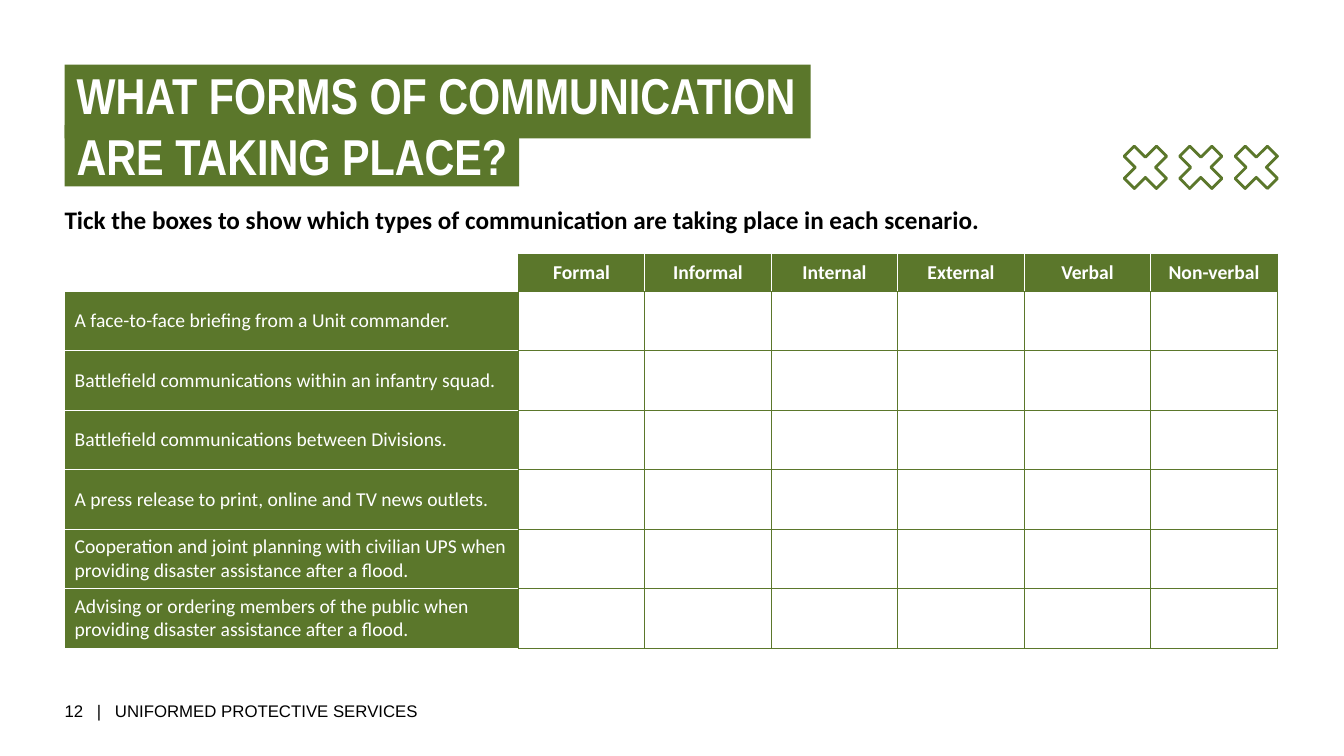
from lxml import etree
from pptx import Presentation
from pptx import util as u
from pptx.dml.color import RGBColor
from pptx.enum import text
from pptx.oxml import ns

PX = 9144  # EMU; 100 px to the inch
GREEN, WHITE, BLACK = "5B772B", "FFFFFF", "000000"
LEFT = 64


def write(frame, words, size, face, color, bold=False, **formats):
    """Put one paragraph into a text frame and format both."""
    frame.text = words
    for name, value in formats.items():
        setattr(frame, name, value)
    paragraph = frame.paragraphs[0]
    paragraph.alignment = text.PP_ALIGN.LEFT
    font = paragraph.runs[0].font
    for name, value in {"size": u.Pt(size), "name": face, "bold": bold}.items():
        setattr(font, name, value)
    font.color.rgb = RGBColor.from_string(color)
    return paragraph


def style_cell(cell, fill, **edges):
    """Fill a cell and draw its four borders, green unless given by side."""
    cell.fill.solid()
    cell.fill.fore_color.rgb = RGBColor.from_string(fill)
    cell.vertical_anchor = text.MSO_ANCHOR.MIDDLE
    properties = cell._tc.get_or_add_tcPr()
    for place, side in enumerate("LRTB"):
        line = etree.Element(ns.qn(f"a:ln{side}"), w=str(u.Pt(0.5)))
        solid = etree.SubElement(line, ns.qn("a:solidFill"))
        etree.SubElement(solid, ns.qn("a:srgbClr"), val=edges.get(side, GREEN))
        properties.insert(place, line)


deck = Presentation()
deck.slide_width, deck.slide_height = 1333 * PX, 750 * PX
slide = deck.slides.add_slide(deck.slide_layouts[5])
no_margins = dict.fromkeys(
    ("margin_left", "margin_top", "margin_right", "margin_bottom"), 0)

# Heading on two green bands
heading = slide.shapes.title
heading_rest = slide.shapes.add_textbox(0, 0, PX, PX)
for band, words, top, width in (
    (heading, "WHAT FORMS OF COMMUNICATION", 64, 740),
    (heading_rest, "ARE TAKING PLACE?", 124, 451),
):
    box = {"left": LEFT, "top": top, "width": width, "height": 61}
    for name, value in box.items():
        setattr(band, name, value * PX)
    band.fill.solid()
    band.fill.fore_color.rgb = RGBColor.from_string(GREEN)
    margins = no_margins | {"margin_left": 12 * PX, "margin_right": 8 * PX}
    write(band.text_frame, words, 36, "Arial Narrow", WHITE, True,
          word_wrap=False, vertical_anchor=text.MSO_ANCHOR.TOP,
          auto_size=text.MSO_AUTO_SIZE.SHAPE_TO_FIT_TEXT, **margins)

# Instruction and footer
instruction = slide.shapes.add_textbox(LEFT * PX, 203 * PX, 959 * PX, 30 * PX)
write(instruction.text_frame,
      "Tick the boxes to show which types of communication are taking place in each scenario.",
      18, "Calibri", BLACK, True, word_wrap=True, **no_margins)

footer = slide.shapes.add_textbox(LEFT * PX, 695 * PX, 382 * PX, 20 * PX)
footer_line = write(footer.text_frame, "12\t|\tUNIFORMED PROTECTIVE SERVICES",
                    12, "Arial", BLACK, word_wrap=True,
                    vertical_anchor=text.MSO_ANCHOR.MIDDLE, **no_margins)
tabs = etree.SubElement(footer_line._p.get_or_add_pPr(), ns.qn("a:tabLst"))
for stop in (32, 50):
    etree.SubElement(tabs, ns.qn("a:tab"), pos=str(stop * PX), algn="l")

# Tick table
forms = ["Formal", "Informal", "Internal", "External", "Verbal", "Non-verbal"]
scenarios = [
    "A face-to-face briefing from a Unit commander.",
    "Battlefield communications within an infantry squad.",
    "Battlefield communications between Divisions.",
    "A press release to print, online and TV news outlets.",
    "Cooperation and joint planning with civilian UPS when providing disaster assistance after a flood.",
    "Advising or ordering members of the public when providing disaster assistance after a flood.",
]
table = slide.shapes.add_table(len(scenarios) + 1, len(forms) + 1, LEFT * PX,
                               252 * PX, 1203 * PX, 391 * PX).table
table.first_row = table.horz_banding = False
for column in table.columns:
    column.width = 753 * PX // len(forms)
table.columns[0].width = 450 * PX
for row in table.rows:
    row.height = 59 * PX
table.rows[0].height = 37 * PX

for r, scenario in enumerate([""] + scenarios):
    for c, form in enumerate([""] + forms):
        cell = table.cell(r, c)
        label = scenario if c == 0 else form if r == 0 else ""
        if c == 0:
            edges = {"L": WHITE, "T": WHITE, "B": WHITE}
        elif r == 0:
            edges = {"L": WHITE if c > 1 else GREEN,
                     "R": WHITE if c < len(forms) else GREEN}
        else:
            edges = {}
        style_cell(cell, GREEN if label else WHITE, **edges)
        if label:
            entry = write(cell.text_frame, label, 14, "Calibri", WHITE, r == 0)
            if r == 0:
                entry.alignment = text.PP_ALIGN.CENTER
        else:
            etree.SubElement(cell.text_frame.paragraphs[0]._p,
                             ns.qn("a:endParaRPr"), sz="1400")

# Three outlined crosses, each a quarter outline turned four times
quarter = [(10, 0), (21, 11), (11, 21)]
cross = []
for turn in range(4):
    cross += quarter
    quarter = [(-y, x) for x, y in quarter]

crosses = None
for center in range(1136, 1247, 55):
    outline = [(center + x, 166 + y) for x, y in cross]
    if crosses is None:
        crosses = slide.shapes.build_freeform(*outline[0], scale=PX)
    else:
        crosses.move_to(*outline[0])
    crosses.add_line_segments(outline[1:], close=True)
ornament = crosses.convert_to_shape()
ornament.shadow.inherit = False
ornament.fill.background()
ornament.line.color.rgb = RGBColor.from_string(GREEN)
ornament.line.width = u.Pt(2)

deck.save("out.pptx")
